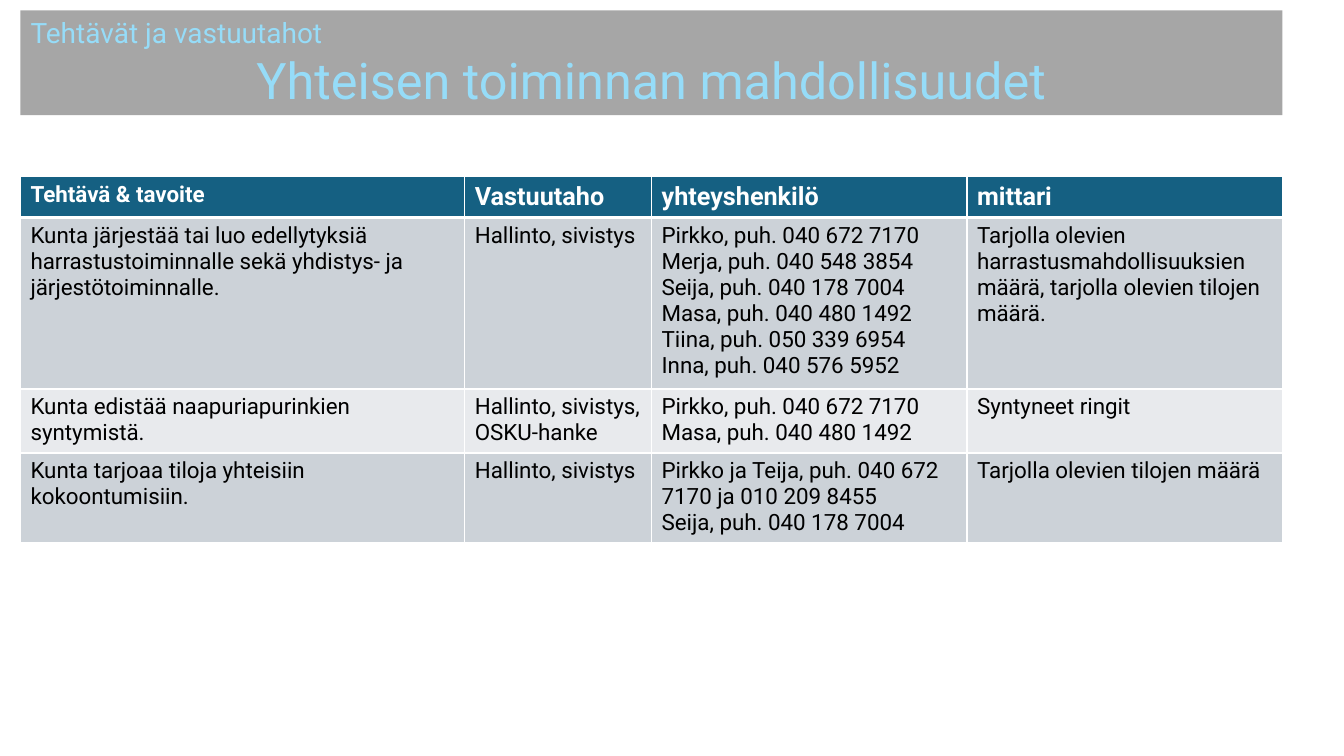
from lxml import etree
from pptx import Presentation
from pptx.dml.color import RGBColor
from pptx.enum.text import MSO_ANCHOR, MSO_AUTO_SIZE, PP_ALIGN
from pptx.oxml.ns import qn
from pptx.util import Pt

LEFT, CENTER = PP_ALIGN.LEFT, PP_ALIGN.CENTER
MIDDLE = MSO_ANCHOR.MIDDLE
NO_FIT = MSO_AUTO_SIZE.NONE

FONT = "Roboto"
GREY, SKY, BLUE, WHITE, BLACK = "A6A6A6", "96DCF8", "156082", "FFFFFF", "000000"
BANDS = ["CCD2D8", "E8EAED"]

TITLE = [
    ("Tehtävät ja vastuutahot", 20, LEFT),
    ("Yhteisen toiminnan mahdollisuudet", 36, CENTER),
]
HEADS = [("Tehtävä & tavoite", 16), ("Vastuutaho", 18), ("yhteyshenkilö", 18), ("mittari", 18)]
TASKS = [
    (
        ["Kunta järjestää tai luo edellytyksiä harrastustoiminnalle sekä yhdistys- ja järjestötoiminnalle."],
        ["Hallinto, sivistys"],
        [
            "Pirkko, puh. 040 672 7170",
            "Merja, puh. 040 548 3854",
            "Seija, puh. 040 178 7004",
            "Masa, puh. 040 480 1492",
            "Tiina, puh. 050 339 6954",
            "Inna, puh. 040 576 5952",
        ],
        ["Tarjolla olevien harrastusmahdollisuuksien määrä, tarjolla olevien tilojen määrä."],
    ),
    (
        ["Kunta edistää naapuriapurinkien syntymistä."],
        ["Hallinto, sivistys, OSKU-hanke"],
        ["Pirkko, puh. 040 672 7170", "Masa, puh. 040 480 1492"],
        ["Syntyneet ringit"],
    ),
    (
        ["Kunta tarjoaa tiloja yhteisiin kokoontumisiin."],
        ["Hallinto, sivistys"],
        ["Pirkko ja Teija, puh. 040 672 7170 ja 010 209 8455", "Seija, puh. 040 178 7004"],
        ["Tarjolla olevien tilojen määrä"],
    ),
]
EDGE, WIDE = 14.6, 901.4
COLS = [317.4, 133.4, 225.3, 225.3]
ROWS = [29.2, 122.4, 45.8, 64.2]


def rgb(code):
    return RGBColor.from_string(code)


def write(frame, lines, color, bold=False):
    for i, (text, size, align) in enumerate(lines):
        para = frame.paragraphs[0] if i == 0 else frame.add_paragraph()
        para.alignment = align
        run = para.add_run()
        run.text = text
        font = run.font
        font.name, font.size, font.bold = FONT, Pt(size), bold
        font.color.rgb = rgb(color)


def border(cell, head, first):
    props = cell._tc.get_or_add_tcPr()
    widths = {"lnL": 1, "lnR": 1, "lnT": 3 if first else 1, "lnB": 3 if head else 1}
    for tag, width in widths.items():
        line = etree.SubElement(props, qn("a:" + tag), w=str(Pt(width)))
        fill = etree.SubElement(line, qn("a:solidFill"))
        etree.SubElement(fill, qn("a:srgbClr"), val=WHITE)


def banner(slide):
    title = slide.shapes.title
    title.left, title.top, title.width, title.height = map(Pt, (EDGE, 7.4, WIDE, 74.8))
    title.fill.solid()
    title.fill.fore_color.rgb = rgb(GREY)
    frame = title.text_frame
    frame.auto_size = NO_FIT
    frame.word_wrap = True
    frame.vertical_anchor = MIDDLE
    write(frame, TITLE, SKY)


def plan(slide):
    place = map(Pt, (EDGE, 126.2, WIDE, sum(ROWS)))
    table = slide.shapes.add_table(len(ROWS), len(COLS), *place).table
    for col, width in zip(table.columns, COLS):
        col.width = Pt(width)
    for row, height in zip(table.rows, ROWS):
        row.height = Pt(height)
    grid = [[[(text, size, LEFT)] for text, size in HEADS]]
    grid += [[[(text, 16, LEFT) for text in lines] for lines in task] for task in TASKS]
    for r, row in enumerate(grid):
        head = r == 0
        for c, lines in enumerate(row):
            cell = table.cell(r, c)
            border(cell, head, r == 1)
            cell.fill.solid()
            cell.fill.fore_color.rgb = rgb(BLUE if head else BANDS[(r - 1) % 2])
            write(cell.text_frame, lines, WHITE if head else BLACK, head)


def main():
    deck = Presentation()
    deck.slide_width, deck.slide_height = Pt(960), Pt(540)
    slide = deck.slides.add_slide(deck.slide_layouts[5])
    banner(slide)
    plan(slide)
    deck.save("out.pptx")


if __name__ == "__main__":
    main()
